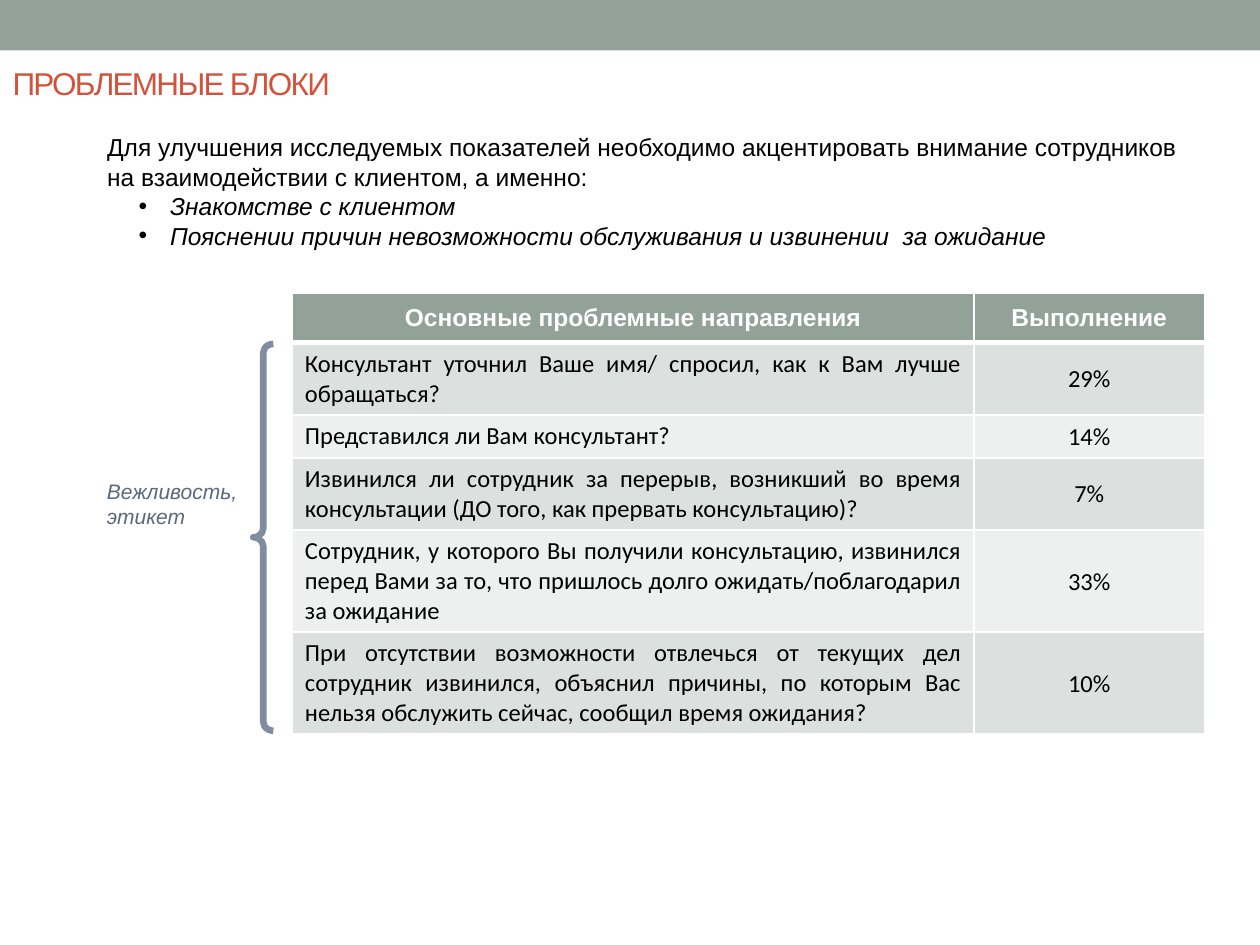
from pptx import Presentation, util as u
from pptx.dml.color import RGBColor
from pptx.enum import shapes, text
from pptx.oxml.ns import qn
from lxml import etree

SAGE = RGBColor(0x93, 0xA2, 0x99)
RED = RGBColor(0xD2, 0x53, 0x3C)
BLACK = RGBColor(0, 0, 0)
WHITE = RGBColor(255, 255, 255)
BAND_DARK = RGBColor(0xDC, 0xE0, 0xDE)
BAND_LIGHT = RGBColor(0xEE, 0xF0, 0xEF)
BRACE = RGBColor(0x80, 0x8D, 0xA0)
SLATE = RGBColor(0x5C, 0x69, 0x7C)

LEFT, CENTER, JUSTIFY = (text.PP_ALIGN.LEFT, text.PP_ALIGN.CENTER,
                         text.PP_ALIGN.JUSTIFY)
MIDDLE, TOP = text.MSO_ANCHOR.MIDDLE, text.MSO_ANCHOR.TOP

# Slide grid: 100 columns by 75 rows
WIDTH, HEIGHT = u.Inches(10), u.Inches(7.5)
COL, ROW = WIDTH / 100, HEIGHT / 75

HEADER = ("Основные проблемные направления", "Выполнение")
PROBLEMS = [
    ("Консультант уточнил Ваше имя/ спросил, как к Вам лучше обращаться?", "29%"),
    ("Представился ли Вам консультант?", "14%"),
    ("Извинился ли сотрудник за перерыв, возникший во время консультации "
     "(ДО того, как прервать консультацию)?", "7%"),
    ("Сотрудник, у которого Вы получили консультацию, извинился перед Вами за то, "
     "что пришлось долго ожидать/поблагодарил за ожидание", "33%"),
    ("При отсутствии возможности отвлечься от текущих дел сотрудник извинился, "
     "объяснил причины, по которым Вас нельзя обслужить сейчас, сообщил время "
     "ожидания?", "10%"),
]
INTRO = ("Для улучшения исследуемых показателей необходимо акцентировать внимание "
         "сотрудников на взаимодействии с клиентом, а именно:")
POINTS = ["Знакомстве с клиентом",
          "Пояснении причин невозможности обслуживания и извинении  за ожидание"]


def grid(x, y, w, h):
    return [int(v) for v in (x * COL, y * ROW, w * COL, h * ROW)]


def place(s, box):
    s.left, s.top, s.width, s.height = grid(*box)


def write(p, words, font="Arial", size=14, color=BLACK, bold=False, italic=False,
          align=LEFT, spacing=None):
    p.alignment = align
    p.space_before = p.space_after = u.Pt(0)
    r = p.add_run()
    r.text = words
    f = r.font
    f.name, f.size, f.bold, f.italic = font, u.Pt(size), bold, italic
    f.color.rgb = color
    if spacing is not None:
        r._r.get_or_add_rPr().set("spc", str(spacing))


def set_bullet(p, char=None, margin=0, hang=0):
    pPr = p._p.get_or_add_pPr()
    pPr.set("marL", str(int(margin * COL)))
    pPr.set("indent", str(int(-hang * COL)))
    if char:
        font = etree.SubElement(pPr, qn("a:buFont"))
        font.set("typeface", "Arial")
        etree.SubElement(pPr, qn("a:buChar")).set("char", char)
    else:
        etree.SubElement(pPr, qn("a:buNone"))


def set_border(cell, **widths):
    tcPr = cell._tc.get_or_add_tcPr()
    for side in "LRTB":
        ln = etree.SubElement(tcPr, qn("a:ln" + side))
        ln.set("w", str(u.Pt(widths.get(side, 1))))
        fill = etree.SubElement(ln, qn("a:solidFill"))
        etree.SubElement(fill, qn("a:srgbClr")).set("val", str(WHITE))


def add_band(slide, box):
    s = slide.shapes.add_shape(shapes.MSO_SHAPE.RECTANGLE, *grid(*box))
    s.shadow.inherit = False
    s.fill.solid()
    s.fill.fore_color.rgb = SAGE
    s.line.fill.background()


def add_title(slide, box):
    s = slide.shapes.title
    place(s, box)
    tf = s.text_frame
    tf.vertical_anchor = MIDDLE
    tf.auto_size = text.MSO_AUTO_SIZE.NONE
    write(tf.paragraphs[0], "ПРОБЛЕМНЫЕ БЛОКИ", size=18, color=RED, spacing=-100)


def add_intro(slide, box):
    s = slide.placeholders[1]
    place(s, box)
    tf = s.text_frame
    tf.vertical_anchor = TOP
    tf.auto_size = text.MSO_AUTO_SIZE.NONE
    write(tf.paragraphs[0], INTRO)
    set_bullet(tf.paragraphs[0])
    for point in POINTS:
        p = tf.add_paragraph()
        p.level = 1
        write(p, point, italic=True)
        set_bullet(p, "•", margin=5, hang=2.5)


def add_problem_table(slide, box):
    rows = [HEADER] + PROBLEMS
    table = slide.shapes.add_table(len(rows), 2, *grid(*box)).table
    for column, width in zip(table.columns, (54.1, 18.3)):
        column.width = int(width * COL)
    for row, height in zip(table.rows, (3.9, 5.6, 3.4, 5.6, 8, 8)):
        row.height = int(height * ROW)
    for i, words in enumerate(rows):
        for j, value in enumerate(words):
            cell = table.cell(i, j)
            cell.vertical_anchor = MIDDLE
            set_border(cell, T=3 if i == 1 else 1, B=3 if i == 0 else 1)
            cell.fill.solid()
            p = cell.text_frame.paragraphs[0]
            if i == 0:
                cell.fill.fore_color.rgb = SAGE
                write(p, value, color=WHITE, bold=True, align=CENTER)
                continue
            cell.fill.fore_color.rgb = BAND_DARK if i % 2 else BAND_LIGHT
            write(p, value, font="Calibri", align=CENTER if j else JUSTIFY)
            if j:
                cell.margin_left = cell.margin_right = cell.margin_top = u.Inches(0.01)
                cell.margin_bottom = 0


def add_brace(slide, box):
    s = slide.shapes.add_shape(shapes.MSO_SHAPE.LEFT_BRACE, *grid(*box))
    s.shadow.inherit = False
    s.adjustments[0], s.adjustments[1] = 0.44, 0.5
    s.fill.background()
    s.line.color.rgb = BRACE
    s.line.width = u.Pt(3.75)


def add_group_label(slide, box):
    tf = slide.shapes.add_textbox(*grid(*box)).text_frame
    tf.word_wrap = True
    write(tf.paragraphs[0], "Вежливость, этикет", size=12, color=SLATE, italic=True)


def main():
    prs = Presentation()
    prs.slide_width, prs.slide_height = WIDTH, HEIGHT
    slide = prs.slides.add_slide(prs.slide_layouts[1])

    # Heading
    add_band(slide, (0, 0, 100, 4))
    add_title(slide, (0, 4.4, 64.6, 4.4))

    # Recommendations
    add_intro(slide, (7.5, 10, 88.2, 10.4))

    # Problem areas with their shared group
    add_problem_table(slide, (23.2, 23.3, 72.4, 34.5))
    add_brace(slide, (20.1, 27.3, 1.6, 30.7))
    add_group_label(slide, (7.5, 37.5, 12.6, 5))

    prs.save("out.pptx")


if __name__ == "__main__":
    main()
